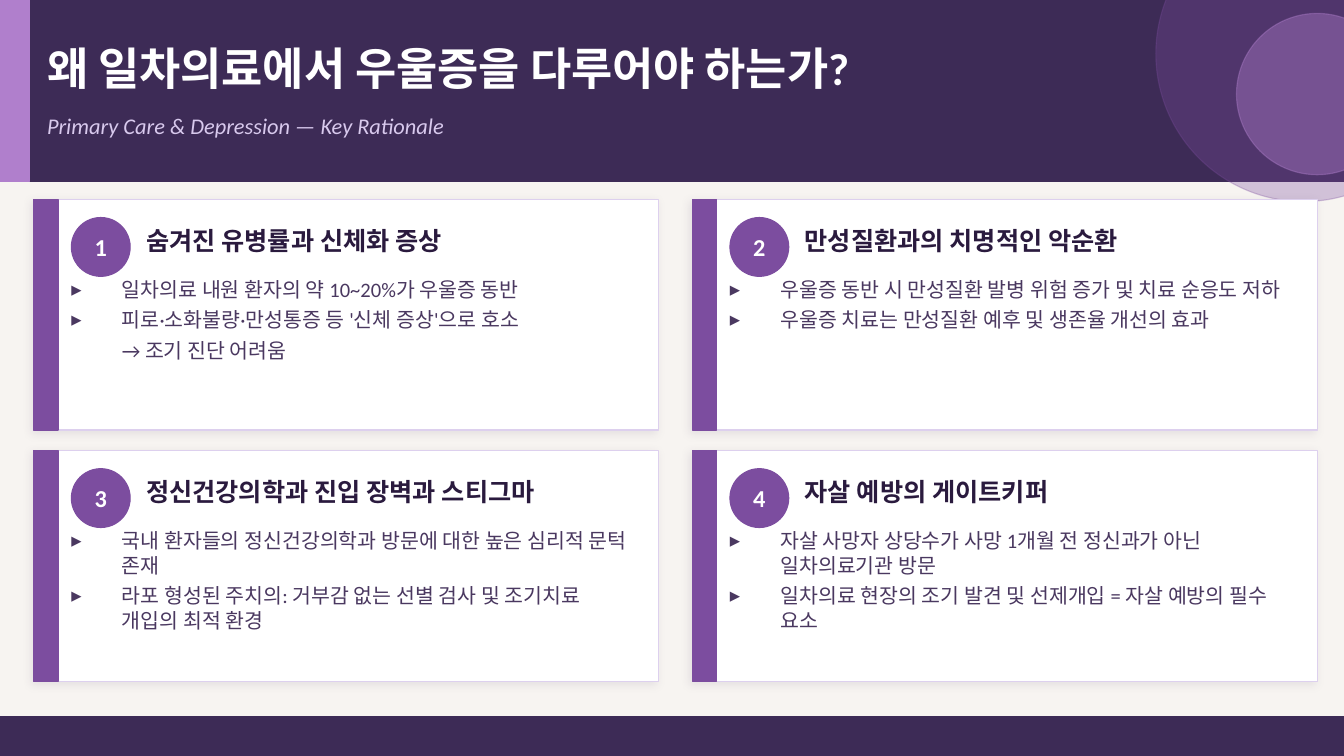
import pptx
import pptx.util
import pptx.dml.color
import pptx.oxml
import pptx.oxml.ns
import pptx.enum.shapes
import pptx.enum.text
import lxml.etree

Inches = pptx.util.Inches
Pt = pptx.util.Pt
SHAPE = pptx.enum.shapes.MSO_SHAPE
ALIGN = pptx.enum.text.PP_ALIGN
ANCHOR = pptx.enum.text.MSO_ANCHOR

DARK, PURPLE, LILAC, WHITE = "3D2B56", "7C4D9F", "B07FCC", "FFFFFF"
FONT = "Calibri"
BULLET_INDENT = 0.6

TITLE = "왜 일차의료에서 우울증을 다루어야 하는가?"
SUBTITLE = "Primary Care & Depression — Key Rationale"
CARDS = [
    ("숨겨진 유병률과 신체화 증상",
     ["일차의료 내원 환자의 약 10~20%가 우울증 동반",
      "피로·소화불량·만성통증 등 '신체 증상'으로 호소",
      "→ 조기 진단 어려움"]),
    ("만성질환과의 치명적인 악순환",
     ["우울증 동반 시 만성질환 발병 위험 증가 및 치료 순응도 저하",
      "우울증 치료는 만성질환 예후 및 생존율 개선의 효과"]),
    ("정신건강의학과 진입 장벽과 스티그마",
     ["국내 환자들의 정신건강의학과 방문에 대한 높은 심리적 문턱 존재",
      "라포 형성된 주치의: 거부감 없는 선별 검사 및 조기치료 개입의 최적 환경"]),
    ("자살 예방의 게이트키퍼",
     ["자살 사망자 상당수가 사망 1개월 전 정신과가 아닌 일차의료기관 방문",
      "일차의료 현장의 조기 발견 및 선제개입 = 자살 예방의 필수 요소"]),
]


def rgb(value):
    """Turn a hex string into a colour."""
    return pptx.dml.color.RGBColor.from_string(value)


def add_element(parent, tag, **attributes):
    """Append a drawing element with the given attributes."""
    element = lxml.etree.SubElement(parent, pptx.oxml.ns.qn(tag))
    for name, value in attributes.items():
        element.set(name, str(value))
    return element


def add_block(slide, kind, left, top, width, height, fill, line=None, opacity=100):
    """Draw a filled shape with a one-point outline and no shadow."""
    shape = slide.shapes.add_shape(
        kind, Inches(left), Inches(top), Inches(width), Inches(height))
    shape.fill.solid()
    shape.fill.fore_color.rgb = rgb(fill)
    shape.line.color.rgb = rgb(line or fill)
    shape.line.width = Pt(1)
    shape.shadow.inherit = False
    if opacity < 100:
        for color in shape._element.spPr.iter(pptx.oxml.ns.qn("a:srgbClr")):
            add_element(color, "a:alpha", val=opacity * 1000)
    return shape


def add_soft_shadow(shape):
    """Give a card its faint shadow."""
    effects = shape._element.spPr.find(pptx.oxml.ns.qn("a:effectLst"))
    shadow = add_element(effects, "a:outerShdw", blurRad=Pt(8), dist=Pt(3),
                         dir=135 * 60000, algn="bl", rotWithShape=0)
    color = add_element(shadow, "a:srgbClr", val=DARK)
    add_element(color, "a:alpha", val=10000)


def set_bullet(paragraph, symbol):
    """Indent a list paragraph, hanging the symbol if there is one."""
    properties = paragraph._p.get_or_add_pPr()
    properties.set("marL", str(Inches(BULLET_INDENT)))
    properties.set("indent", str(-Inches(BULLET_INDENT) if symbol else 0))
    if symbol:
        add_element(properties, "a:buChar", char=symbol)
    else:
        add_element(properties, "a:buNone")


def write_text(shape, lines, size, color, bold=False, italic=False,
               align=ALIGN.LEFT, anchor=ANCHOR.TOP, after=0, bullet=None):
    """Write paragraphs into a shape without insets."""
    frame = shape.text_frame
    frame.word_wrap = True
    frame.auto_size = pptx.enum.text.MSO_AUTO_SIZE.NONE
    frame.vertical_anchor = anchor
    frame.margin_left = frame.margin_right = 0
    frame.margin_top = frame.margin_bottom = 0
    for index, line in enumerate(lines):
        paragraph = frame.paragraphs[0] if index == 0 else frame.add_paragraph()
        if bullet:
            set_bullet(paragraph, None if line.startswith("→") else bullet)
        paragraph.alignment = align
        paragraph.space_before = Pt(0)
        paragraph.space_after = Pt(after)
        run = paragraph.add_run()
        run.text = line
        run.font.size = Pt(size)
        run.font.bold = bold
        run.font.italic = italic
        run.font.color.rgb = rgb(color)
        run.font.name = FONT
        add_element(run._r.get_or_add_rPr(), "a:ea", typeface=FONT)


def add_text(slide, left, top, width, height, text, **text_format):
    """Add a text box holding one paragraph."""
    box = slide.shapes.add_textbox(
        Inches(left), Inches(top), Inches(width), Inches(height))
    write_text(box, [text], **text_format)


def place_placeholder(slide, placeholder, left, top, width, height):
    """Move a placeholder to its box, in front of what is drawn so far."""
    placeholder.left, placeholder.top = Inches(left), Inches(top)
    placeholder.width, placeholder.height = Inches(width), Inches(height)
    slide.shapes._spTree.append(placeholder._element)


def add_header(slide, left, top, width, height):
    """Draw the title band with its accent, circles and texts."""
    add_block(slide, SHAPE.RECTANGLE, left, top, width, height, DARK)
    add_block(slide, SHAPE.RECTANGLE, left, top, 0.35, height, LILAC)
    add_block(slide, SHAPE.OVAL, left + 13.76, top - 1.12, 3.52, 3.52, PURPLE, opacity=30)
    add_block(slide, SHAPE.OVAL, left + 14.72, top + 0.16, 1.92, 1.92, LILAC, opacity=40)
    title = slide.shapes.title
    place_placeholder(slide, title, left + 0.56, top + 0.29, 14.08, 1.04)
    write_text(title, [TITLE], size=38.4, color=WHITE, bold=True, anchor=ANCHOR.MIDDLE)
    add_text(slide, left + 0.56, top + 1.34, 14.08, 0.61, SUBTITLE,
             size=19.2, color="D8C9ED", italic=True)


def add_card(slide, left, top, width, height, number, heading, points):
    """Draw one numbered card with its heading and list."""
    card = add_block(slide, SHAPE.RECTANGLE, left, top, width, height, WHITE, "DDD0EE")
    add_soft_shadow(card)
    add_block(slide, SHAPE.RECTANGLE, left, top, 0.29, height, PURPLE)
    badge = add_block(slide, SHAPE.OVAL, left + 0.45, top + 0.22, 0.7, 0.7, PURPLE)
    write_text(badge, [str(number)], size=20.8, color=WHITE, bold=True,
               align=ALIGN.CENTER, anchor=ANCHOR.MIDDLE)
    add_text(slide, left + 1.34, top + 0.16, width - 1.6, 0.67, heading,
             size=21.6, color="2A1A3E", bold=True, anchor=ANCHOR.MIDDLE)
    body = slide.placeholders[number]
    place_placeholder(slide, body, left + 0.45, top + 0.93, width - 0.72, height - 0.99)
    write_text(body, points, size=17.6, color="4A3860", after=4.8, bullet="▸")


def main():
    """Build the slide and save it."""
    presentation = pptx.Presentation()
    presentation.slide_width = Inches(16)
    presentation.slide_height = Inches(9)
    slide = presentation.slides.add_slide(
        presentation.slide_layouts.get_by_name("Comparison"))
    slide.background.fill.solid()
    slide.background.fill.fore_color.rgb = rgb("F7F4F1")
    add_header(slide, 0, 0, 16, 2.16)
    for index, (heading, points) in enumerate(CARDS):
        row, column = divmod(index, 2)
        add_card(slide, 0.4 + 7.84 * column, 2.37 + 2.99 * row, 7.44, 2.75,
                 index + 1, heading, points)
    add_block(slide, SHAPE.RECTANGLE, 0, 8.53, 16, 0.47, DARK)
    presentation.save("out.pptx")


if __name__ == "__main__":
    main()
